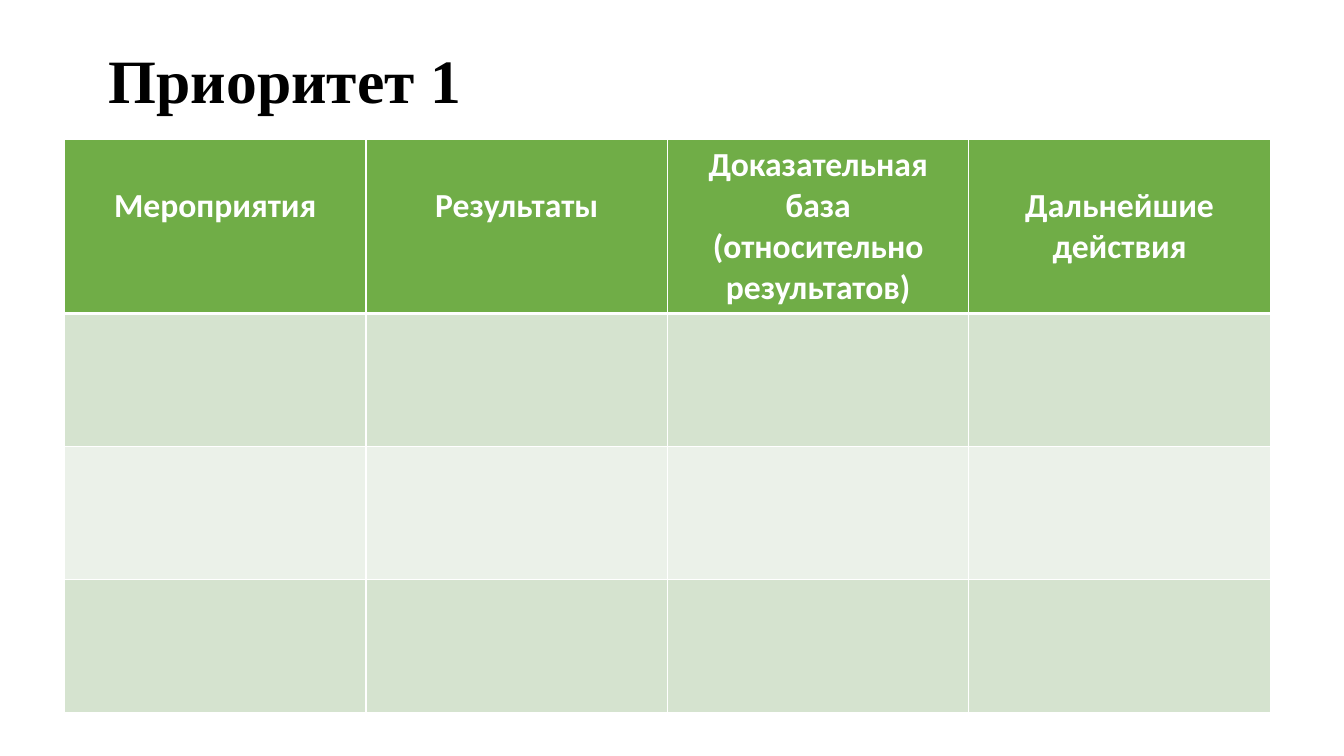
from lxml import etree
from pptx import Presentation
from pptx import util as u
from pptx.dml.color import RGBColor
from pptx.enum import text
from pptx.oxml import ns

COLORS = {
    "title": "000000",
    "header": "70AD47",
    "band_dark": "D5E3CF",
    "band_light": "EBF1E9",
    "white": "FFFFFF",
}
HEADINGS = [
    ("Мероприятия", 0.46),
    ("Результаты", 0.46),
    ("Доказательная база (относительно результатов)", 0.05),
    ("Дальнейшие действия", 0.46),
]
BODY_BANDS = ["band_dark", "band_light", "band_dark"]
COLUMN_WIDTH = 2.99
HEADER_HEIGHT = 1.73
BODY_HEIGHT = 1.32


def color(name):
    return RGBColor.from_string(COLORS[name])


def style_para(para, font, size, color_name):
    for span in para.runs:
        span.font.name = font
        span.font.size = u.Pt(size)
        span.font.bold = True
        span.font.color.rgb = color(color_name)


def add_title(page, title):
    box = page.shapes.add_textbox(
        u.Inches(0.98), u.Inches(0.1), u.Inches(11.5), u.Inches(1.45)
    )
    frame = box.text_frame
    frame.word_wrap = True
    frame.vertical_anchor = text.MSO_ANCHOR.MIDDLE
    frame.text = title
    para = frame.paragraphs[0]
    para.line_spacing = 0.9
    style_para(para, "Times New Roman", 44, "title")


def set_borders(cell, top, bottom):
    properties = cell._tc.get_or_add_tcPr()
    widths = {"lnL": 1, "lnR": 1, "lnT": top, "lnB": bottom}
    for position, (side, width) in enumerate(widths.items()):
        line = etree.Element(ns.qn(f"a:{side}"), w=str(u.Pt(width)))
        fill = etree.SubElement(line, ns.qn("a:solidFill"))
        etree.SubElement(fill, ns.qn("a:srgbClr"), val=COLORS["white"])
        properties.insert(position, line)


def paint_cell(cell, fill_name, top=1, bottom=1):
    cell.fill.solid()
    cell.fill.fore_color.rgb = color(fill_name)
    set_borders(cell, top, bottom)


def fill_heading(cell, heading, margin_top):
    cell.margin_top = u.Inches(margin_top)
    cell.text_frame.text = heading
    para = cell.text_frame.paragraphs[0]
    para.alignment = text.PP_ALIGN.CENTER
    style_para(para, "Calibri", 24, "white")
    paint_cell(cell, "header", bottom=3)


def add_priority_table(page):
    row_count = len(BODY_BANDS) + 1
    column_count = len(HEADINGS)
    table = page.shapes.add_table(
        row_count,
        column_count,
        u.Inches(0.64),
        u.Inches(1.38),
        u.Inches(COLUMN_WIDTH * column_count),
        u.Inches(HEADER_HEIGHT + BODY_HEIGHT * len(BODY_BANDS)),
    ).table
    for column in table.columns:
        column.width = u.Inches(COLUMN_WIDTH)
    for index, row in enumerate(table.rows):
        row.height = u.Inches(BODY_HEIGHT if index else HEADER_HEIGHT)
    for index, (heading, margin_top) in enumerate(HEADINGS):
        fill_heading(table.cell(0, index), heading, margin_top)
    for row, band in enumerate(BODY_BANDS, start=1):
        for column in range(column_count):
            paint_cell(table.cell(row, column), band, top=3 if row == 1 else 1)


def main():
    deck = Presentation()
    deck.slide_width = u.Inches(13.33)
    deck.slide_height = u.Inches(7.5)
    page = deck.slides.add_slide(deck.slide_layouts[6])
    add_title(page, "Приоритет 1")
    add_priority_table(page)
    deck.save("out.pptx")


if __name__ == "__main__":
    main()
